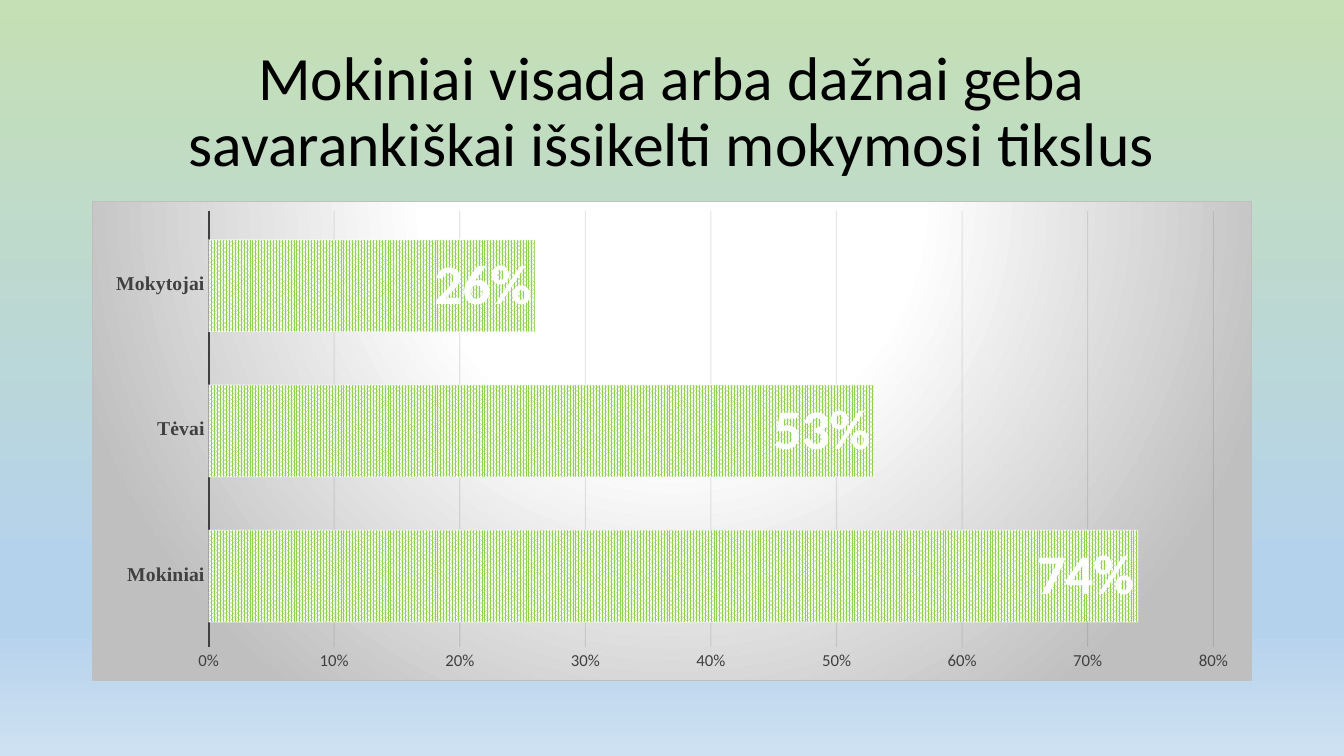
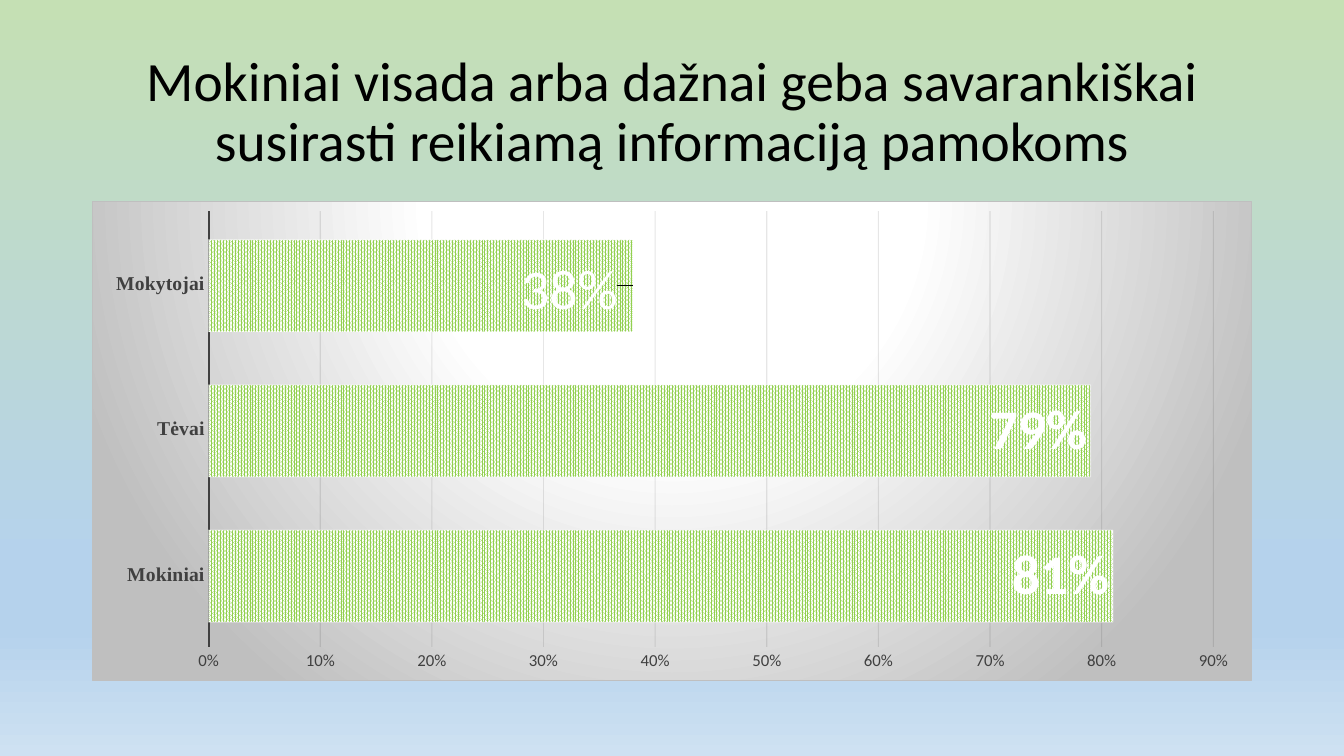
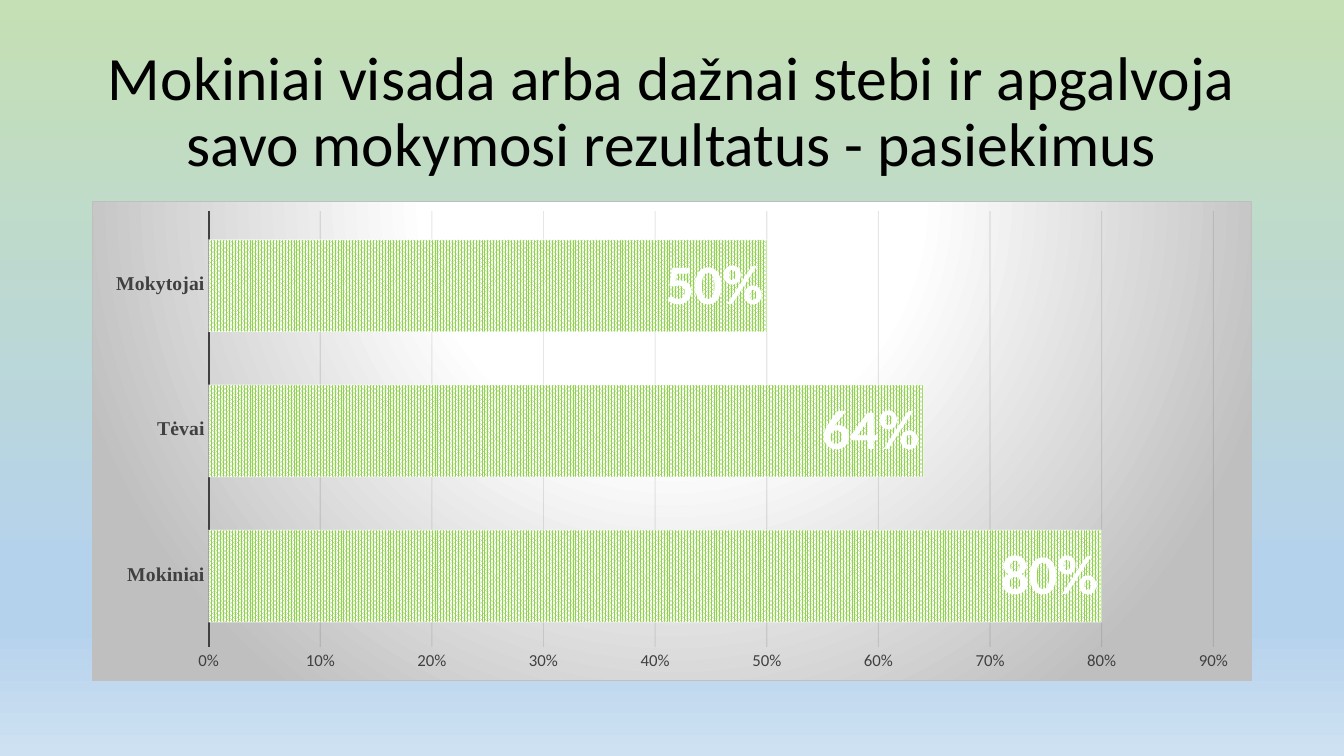
from lxml.etree import SubElement
from pptx import Presentation
from pptx.chart.data import CategoryChartData
from pptx.dml.color import RGBColor
from pptx.enum.chart import XL_CHART_TYPE, XL_LABEL_POSITION, XL_TICK_MARK
from pptx.enum.dml import MSO_PATTERN
from pptx.enum.text import MSO_ANCHOR, PP_ALIGN
from pptx.oxml import parse_xml
from pptx.oxml.ns import nsdecls, qn
from pptx.util import Pt

BODY_FONT, GROUP_FONT = "Calibri", "Times New Roman"
BLACK, DARK, WHITE, GREY, GREEN = "000000", "404040", "FFFFFF", "BFBFBF", "92D050"
GRIDLINE = "0D0D0D"
SKY = [(0, "C5E0B4"), (74, "B5D2EC"), (83, "B5D2EC"), (100, "CEE1F2")]
GLOW = [(0, WHITE), (39, WHITE), (100, GREY)]
DOWNWARD = '<a:lin ang="5400000" scaled="0"/>'
CIRCLE = ('<a:path path="circle"><a:fillToRect l="50000" t="-80000" '
          'r="50000" b="180000"/></a:path>')

TITLE_BOX = (66, 28.75, 828, 104.4)
CHART_BOX = (66, 143.75, 828, 342.6)
GROUPS = ["Mokiniai", "Tėvai", "Mokytojai"]
SLIDES = [
    ("Mokiniai visada arba dažnai geba savarankiškai išsikelti mokymosi tikslus",
     44, (0.74, 0.53, 0.26), None),
    ("Mokiniai visada arba dažnai geba savarankiškai susirasti reikiamą "
     "informaciją pamokoms", 39.6, (0.81, 0.79, 0.38), (2, "38%")),
    ("Mokiniai visada arba dažnai stebi ir apgalvoja savo mokymosi rezultatus "
     "- pasiekimus", 44, (0.8, 0.64, 0.5), None),
]


def rgb(value):
    return RGBColor.from_string(value)


def set_font(font, size, color, bold=False, name=BODY_FONT):
    font.size, font.bold, font.name = Pt(size), bold, name
    font.color.rgb = rgb(color)


def set_line(line, color, width):
    line.color.rgb = rgb(color)
    line.width = Pt(width)


def set_alpha(colors, percent):
    for color in colors:
        SubElement(color, qn("a:alpha")).set("val", str(percent * 1000))


def gradient(stops, direction):
    gs = "".join(f'<a:gs pos="{pos * 1000}"><a:srgbClr val="{color}"/></a:gs>'
                 for pos, color in stops)
    return parse_xml(f'<a:gradFill {nsdecls("a")} rotWithShape="1">'
                     f'<a:gsLst>{gs}</a:gsLst>{direction}</a:gradFill>')


def set_background(master):
    master.background.fill.solid()
    solid = master.element.find(".//" + qn("p:bgPr")).find(qn("a:solidFill"))
    solid.getparent().replace(solid, gradient(SKY, DOWNWARD))


def add_title(s, box, text, size):
    tf = s.shapes.add_textbox(*map(Pt, box)).text_frame
    tf.word_wrap = True
    tf.vertical_anchor = MSO_ANCHOR.MIDDLE
    p = tf.paragraphs[0]
    p.text = text
    p.alignment = PP_ALIGN.CENTER
    p.line_spacing = 0.9
    set_font(p.font, size, BLACK)


def style_axes(chart):
    groups, shares = chart.category_axis, chart.value_axis
    for axis in (groups, shares):
        axis.major_tick_mark = axis.minor_tick_mark = XL_TICK_MARK.NONE
    set_font(groups.tick_labels.font, 14, DARK, True, GROUP_FONT)
    set_line(groups.format.line, DARK, 1.5)
    set_font(shares.tick_labels.font, 12, DARK)
    shares.tick_labels.number_format = "0%"
    shares.tick_labels.number_format_is_linked = False
    shares.format.line.fill.background()
    set_line(shares.major_gridlines.format.line, GRIDLINE, 0.75)
    set_alpha(chart.element.xpath(".//c:majorGridlines//a:srgbClr"), 10)


def style_series(chart):
    plot = chart.plots[0]
    plot.gap_width, plot.overlap = 54, 98
    plot.vary_by_categories = False
    for series, color, size in zip(plot.series, (GREEN, "ED7D31", "A5A5A5"),
                                   (40, 12, 12)):
        fill = series.format.fill
        if color == GREEN:
            fill.patterned()
            fill.pattern = MSO_PATTERN.PERCENT_80
            fill.fore_color.rgb, fill.back_color.rgb = rgb(color), rgb(WHITE)
        else:
            fill.solid()
            fill.fore_color.rgb = rgb(color)
        set_line(series.format.line, WHITE, 0.75)
        labels = series.data_labels
        labels.show_value = True
        labels.number_format, labels.number_format_is_linked = "0%", False
        labels.position = XL_LABEL_POSITION.INSIDE_END
        set_font(labels.font, size, WHITE, True)
    set_alpha(chart.element.xpath(".//c:ser/c:spPr/a:solidFill/a:srgbClr"), 85)
    set_alpha(chart.element.xpath(".//c:ser/c:spPr/a:ln//a:srgbClr"), 50)


def add_own_label(chart, index, text):
    """Replace one bar's label by own text, moved slightly left and down."""
    label = chart.plots[0].series[0].points[index].data_label
    p = label.text_frame.paragraphs[0]
    p.text = text
    set_font(p.font, 40, WHITE)
    label.position = XL_LABEL_POSITION.INSIDE_END
    idx = chart.element.xpath(".//c:dLbl/c:idx")[0]
    idx.addnext(parse_xml(
        f'<c:layout {nsdecls("c")}><c:manualLayout><c:x val="-0.01"/>'
        '<c:y val="0.01"/></c:manualLayout></c:layout>'))


def style_chart_area(chart):
    area = parse_xml(
        f'<c:spPr {nsdecls("c", "a")}><a:ln w="{Pt(0.75)}"><a:solidFill>'
        f'<a:srgbClr val="{GREY}"/></a:solidFill></a:ln></c:spPr>')
    area.insert(0, gradient(GLOW, CIRCLE))
    chart.element.find(qn("c:chart")).addnext(area)


def add_share_chart(s, box, values, own_label):
    data = CategoryChartData(number_format="0%")
    data.categories = GROUPS
    for number, series_values in enumerate((values, [None] * 3, [None] * 3), 1):
        data.add_series(f"Series {number}", series_values)
    chart = s.shapes.add_chart(XL_CHART_TYPE.BAR_CLUSTERED, *map(Pt, box), data).chart
    chart.has_title = chart.has_legend = False
    set_font(chart.font, 10, BLACK)
    style_axes(chart)
    style_series(chart)
    style_chart_area(chart)
    if own_label:
        add_own_label(chart, *own_label)


def main():
    prs = Presentation()
    prs.slide_width, prs.slide_height = Pt(960), Pt(540)
    set_background(prs.slide_master)
    for title, size, values, own_label in SLIDES:
        s = prs.slides.add_slide(prs.slide_layouts[6])
        add_title(s, TITLE_BOX, title, size)
        add_share_chart(s, CHART_BOX, values, own_label)
    prs.save("out.pptx")


if __name__ == "__main__":
    main()
